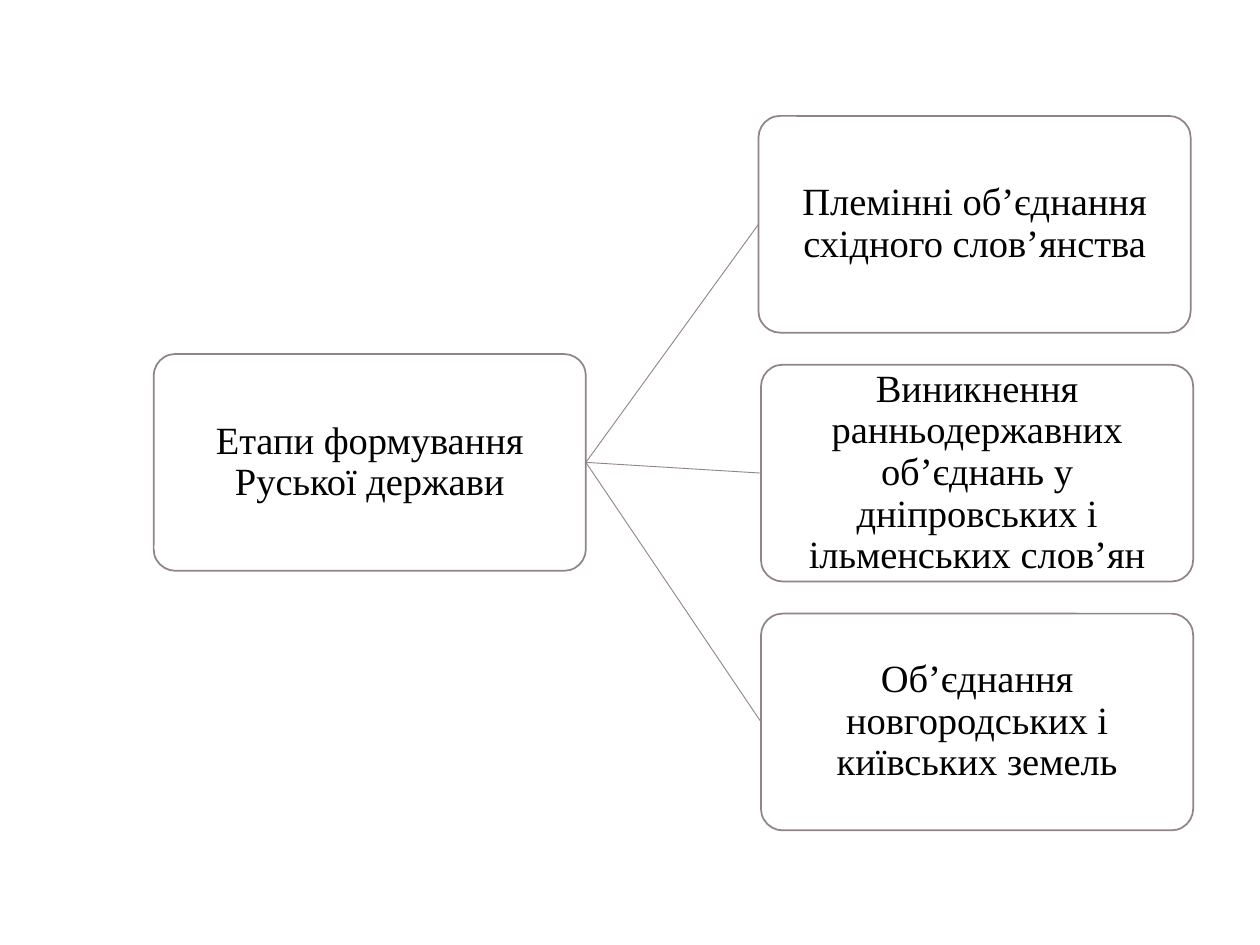
import dataclasses

import pptx
import pptx.dml.color
import pptx.enum.shapes
import pptx.enum.text
import pptx.oxml
import pptx.oxml.ns
import pptx.util


@dataclasses.dataclass(frozen=True)
class Theme:
    font: str = "Times New Roman"
    text_size: float = 22
    text_color: str = "000000"
    box_fill: str = "FFFFFF"
    line_color: str = "918485"
    box_line: float = 1
    branch_line: float = 0.5


COLUMNS, ROWS = 100, 75
BOX_WIDTH, BOX_HEIGHT = 34.3, 17.2
LEFT_SITE, RIGHT_SITE = 1, 3

ROOT = ("Етапи формування Руської держави", 12.2, 28.1)
STAGES_TOP, STAGE_STEP = 9.2, 19.75
STAGES = [
    ("Племінні об’єднання східного слов’янства", 60.2),
    ("Виникнення ранньодержавних об’єднань у дніпровських і ільменських слов’ян", 60.4),
    ("Об’єднання новгородських і київських земель", 60.4),
]


def rgb(color):
    return pptx.dml.color.RGBColor.from_string(color)


def write_text(frame, text, *, font, size, color, line_spacing=0.9, inset=0.02):
    """Fill a frame with one centred, wrapped paragraph."""
    frame.word_wrap = True
    frame.vertical_anchor = pptx.enum.text.MSO_ANCHOR.MIDDLE
    frame.margin_left = frame.margin_right = pptx.util.Inches(inset)
    frame.margin_top = frame.margin_bottom = pptx.util.Inches(inset)
    paragraph = frame.paragraphs[0]
    paragraph.alignment = pptx.enum.text.PP_ALIGN.CENTER
    paragraph.line_spacing = line_spacing
    run = paragraph.add_run()
    run.text = text
    run.font.name = font
    run.font.size = pptx.util.Pt(size)
    run.font.color.rgb = rgb(color)


class Diagram:
    def __init__(self, presentation, theme):
        self.theme = theme
        self.column = presentation.slide_width / COLUMNS
        self.row = presentation.slide_height / ROWS
        self.slide = presentation.slides.add_slide(presentation.slide_layouts[6])

    def box(self, text, left, top):
        shape = self.slide.shapes.add_shape(
            pptx.enum.shapes.MSO_SHAPE.ROUNDED_RECTANGLE,
            round(left * self.column), round(top * self.row),
            round(BOX_WIDTH * self.column), round(BOX_HEIGHT * self.row))
        shape.adjustments[0] = 0.1
        shape.shadow.inherit = False
        shape.fill.solid()
        shape.fill.fore_color.rgb = rgb(self.theme.box_fill)
        self.outline(shape.line, self.theme.box_line)
        write_text(shape.text_frame, text, font=self.theme.font,
                   size=self.theme.text_size, color=self.theme.text_color)
        return shape

    def branch(self, parent, child):
        connector = self.slide.shapes.add_connector(
            pptx.enum.shapes.MSO_CONNECTOR.STRAIGHT, 0, 0, 0, 0)
        connector.begin_connect(parent, RIGHT_SITE)
        connector.end_connect(child, LEFT_SITE)
        self.outline(connector.line, self.theme.branch_line)
        properties = connector._element.spPr
        properties.append(pptx.oxml.parse_xml(
            f"<a:effectLst {pptx.oxml.ns.nsdecls('a')}/>"))

    def outline(self, line, width):
        line.color.rgb = rgb(self.theme.line_color)
        line.width = pptx.util.Pt(width)


def main():
    presentation = pptx.Presentation()
    presentation.slide_width = pptx.util.Inches(10)
    presentation.slide_height = pptx.util.Inches(7.5)
    diagram = Diagram(presentation, Theme())
    root = diagram.box(*ROOT)
    for index, (text, left) in enumerate(STAGES):
        stage = diagram.box(text, left, STAGES_TOP + index * STAGE_STEP)
        diagram.branch(root, stage)
    presentation.save("out.pptx")


if __name__ == "__main__":
    main()
